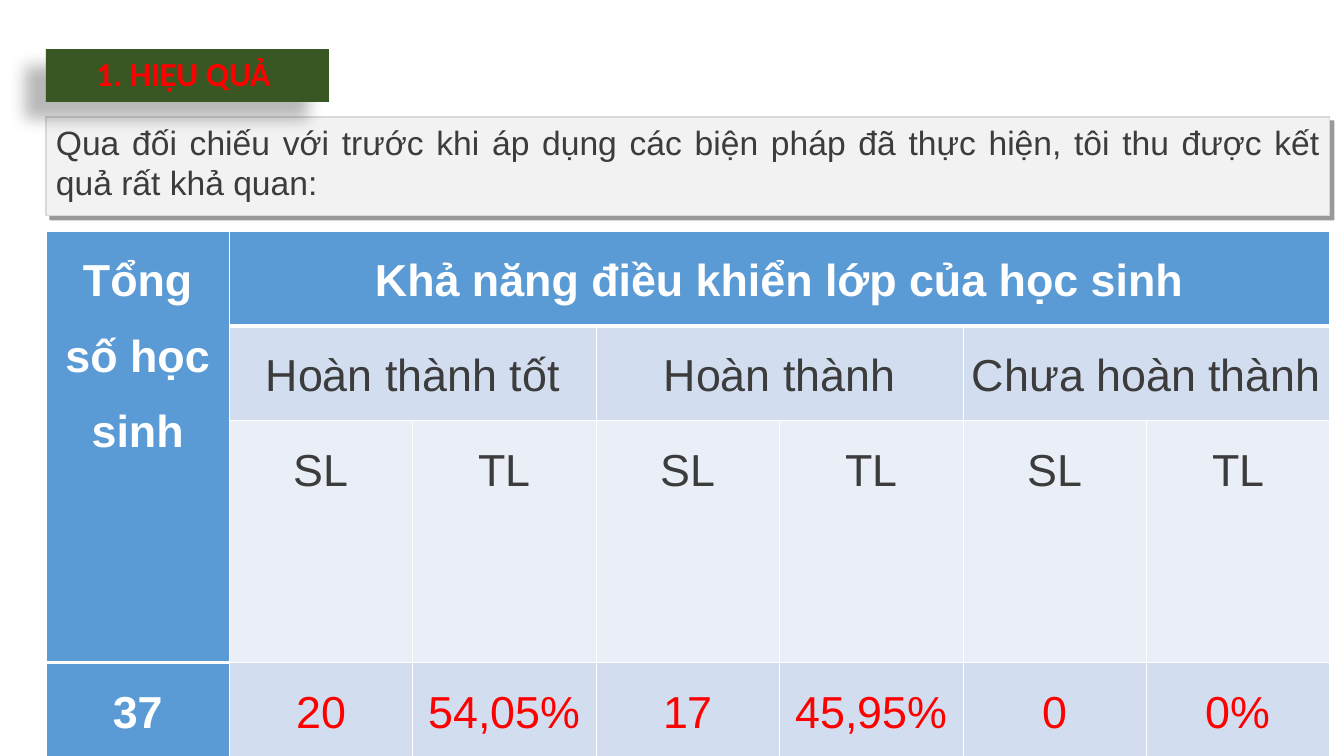
from dataclasses import dataclass

from lxml import etree
from pptx import Presentation
from pptx import util as u
from pptx.dml.color import RGBColor
from pptx.enum import shapes, text
from pptx.oxml import ns

EMU_PER_PX = 914400 / 100.8
COLUMNS = 7


def px(length):
    return u.Emu(round(length * EMU_PER_PX))


@dataclass(frozen=True)
class Theme:
    heading_font: str = "Calibri"
    body_font: str = "Arial"
    body_size: int = 24
    table_size: int = 32
    ink: str = "3C3C3C"
    accent: str = "FF0000"
    white: str = "FFFFFF"
    black: str = "000000"
    green: str = "385723"
    panel: str = "F2F2F2"
    panel_edge: str = "D9D9D9"
    header: str = "5B9BD5"
    band_dark: str = "D2DEEF"
    band_light: str = "EAEFF7"


class SlideBuilder:
    def __init__(self, slide, theme):
        self.slide = slide
        self.theme = theme

    def add_child(self, parent, tag, **attributes):
        return etree.SubElement(parent, ns.qn(tag), attributes)

    def paint(self, part, colour):
        part.fill.solid()
        part.fill.fore_color.rgb = RGBColor.from_string(colour)

    def place(self, shape, left, top, width, height):
        shape.left, shape.top = px(left), px(top)
        shape.width, shape.height = px(width), px(height)

    def add_text(self, frame, words, font, size, colour, bold, align):
        paragraph = frame.paragraphs[0]
        paragraph.alignment = align
        run = paragraph.add_run()
        run.text = words
        run.font.name = font
        run.font.size = u.Pt(size)
        run.font.bold = bold
        run.font.color.rgb = RGBColor.from_string(colour)
        return paragraph

    def cast_shadow(self, shape, blur, distance, angle, opacity):
        shape.shadow.inherit = False
        effects = shape.element.spPr.find(ns.qn("a:effectLst"))
        shadow = self.add_child(
            effects, "a:outerShdw", blurRad=str(u.Pt(blur)),
            dist=str(u.Pt(distance)), dir=str(angle * 60000),
            algn="ctr", rotWithShape="0")
        colour = self.add_child(shadow, "a:srgbClr", val=self.theme.black)
        self.add_child(colour, "a:alpha", val=str(opacity * 1000))

    def panel(self, *box):
        panel = self.slide.shapes.add_shape(
            shapes.MSO_SHAPE.RECTANGLE, *map(px, box))
        self.paint(panel, self.theme.panel)
        panel.line.color.rgb = RGBColor.from_string(self.theme.panel_edge)
        panel.line.width = u.Pt(0.75)
        self.cast_shadow(panel, 0, 4, 45, 40)
        return panel

    def title(self, words, behind, *box):
        title = self.slide.shapes.title
        self.place(title, *box)
        outline = self.add_child(
            title.element.spPr, "a:prstGeom", prst="homePlate")
        guides = self.add_child(outline, "a:avLst")
        self.add_child(guides, "a:gd", name="adj", fmla="val 23300")
        self.paint(title, self.theme.green)
        title.line.fill.background()
        self.cast_shadow(title, 11.8, 19.7, 141, 28)
        frame = title.text_frame
        frame.word_wrap = True
        frame.auto_size = text.MSO_AUTO_SIZE.NONE
        frame.vertical_anchor = text.MSO_ANCHOR.MIDDLE
        frame.margin_left, frame.margin_right = px(17), px(25)
        frame.margin_top = frame.margin_bottom = px(9)
        paragraph = self.add_text(
            frame, words, self.theme.heading_font, self.theme.body_size,
            self.theme.accent, True, text.PP_ALIGN.CENTER)
        paragraph.line_spacing = 0.9
        title.element.addprevious(behind.element)

    def statement(self, words, *box):
        statement = self.slide.shapes.add_textbox(*map(px, box))
        frame = statement.text_frame
        frame.word_wrap = True
        frame.auto_size = text.MSO_AUTO_SIZE.SHAPE_TO_FIT_TEXT
        self.add_text(
            frame, words, self.theme.body_font, self.theme.body_size,
            self.theme.ink, False, text.PP_ALIGN.JUSTIFY)

    def cell_borders(self, cell, top, bottom):
        properties = cell._tc.get_or_add_tcPr()
        for side, points in (("L", 1), ("R", 1), ("T", top), ("B", bottom)):
            border = self.add_child(
                properties, f"a:ln{side}", w=str(u.Pt(points)))
            fill = self.add_child(border, "a:solidFill")
            self.add_child(fill, "a:srgbClr", val=self.theme.white)

    def cell(self, cell, words, fill, colour, bold, top, bottom):
        self.cell_borders(cell, top, bottom)
        self.paint(cell, fill)
        cell.margin_left = cell.margin_right = px(7)
        cell.margin_top = cell.margin_bottom = 0
        if words:
            paragraph = self.add_text(
                cell.text_frame, words, self.theme.body_font,
                self.theme.table_size, colour, bold, text.PP_ALIGN.CENTER)
            paragraph.line_spacing = 1.5
            paragraph.space_before = u.Pt(6)

    def table(self, rows, spans, *box):
        theme = self.theme
        table = self.slide.shapes.add_table(
            len(rows), COLUMNS, *map(px, box)).table
        for first, last in spans:
            table.cell(*first).merge(table.cell(*last))
        bands = (theme.header, theme.band_dark, theme.band_light,
                 theme.band_dark)
        inks = (theme.white, theme.ink, theme.ink, theme.accent)
        for row, entries in enumerate(rows):
            for column, words in enumerate(entries):
                heading = row == 0 or column == 0
                thick_top = row == 1 or (row == 3 and column == 0)
                thick_bottom = row == 0 or (row == 2 and column == 0)
                self.cell(
                    table.cell(row, column), words,
                    theme.header if heading else bands[row],
                    theme.white if heading else inks[row], heading,
                    3 if thick_top else 1, 3 if thick_bottom else 1)


def main():
    deck = Presentation()
    deck.slide_width, deck.slide_height = px(1344), px(756)
    slide = deck.slides.add_slide(deck.slide_layouts[5])
    builder = SlideBuilder(slide, Theme())

    panel = builder.panel(46, 117, 1284, 99)
    builder.title("1. HIỆU QUẢ", panel, 46, 49, 283, 53)
    builder.statement(
        "Qua đối chiếu với trước khi áp dụng các biện pháp đã thực hiện, "
        "tôi thu được kết quả rất khả quan:", 46, 117, 1284, 92)

    results = (
        ("Tổng số học sinh", "Khả năng điều khiển lớp của học sinh",
         "", "", "", "", ""),
        ("", "Hoàn thành tốt", "", "Hoàn thành", "", "Chưa hoàn thành", ""),
        ("",) + ("SL", "TL") * 3,
        ("37", "20", "54,05%", "17", "45,95%", "0", "0%"),
    )
    spans = [((0, 0), (2, 0)), ((0, 1), (0, 6))]
    spans += [((1, column), (1, column + 1)) for column in (1, 3, 5)]
    builder.table(results, spans, 46, 231, 1284, 379)

    deck.save("out.pptx")


if __name__ == "__main__":
    main()
